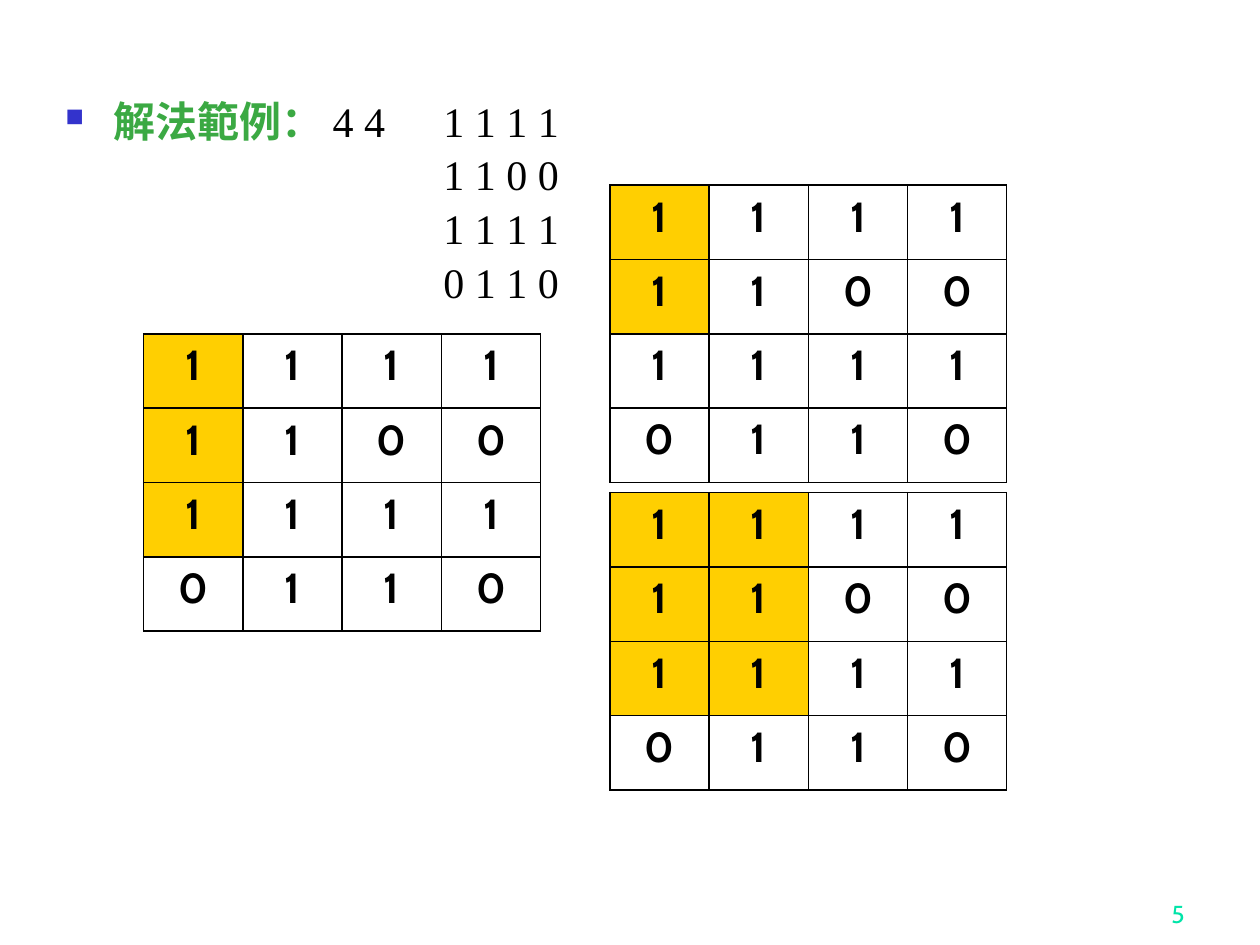
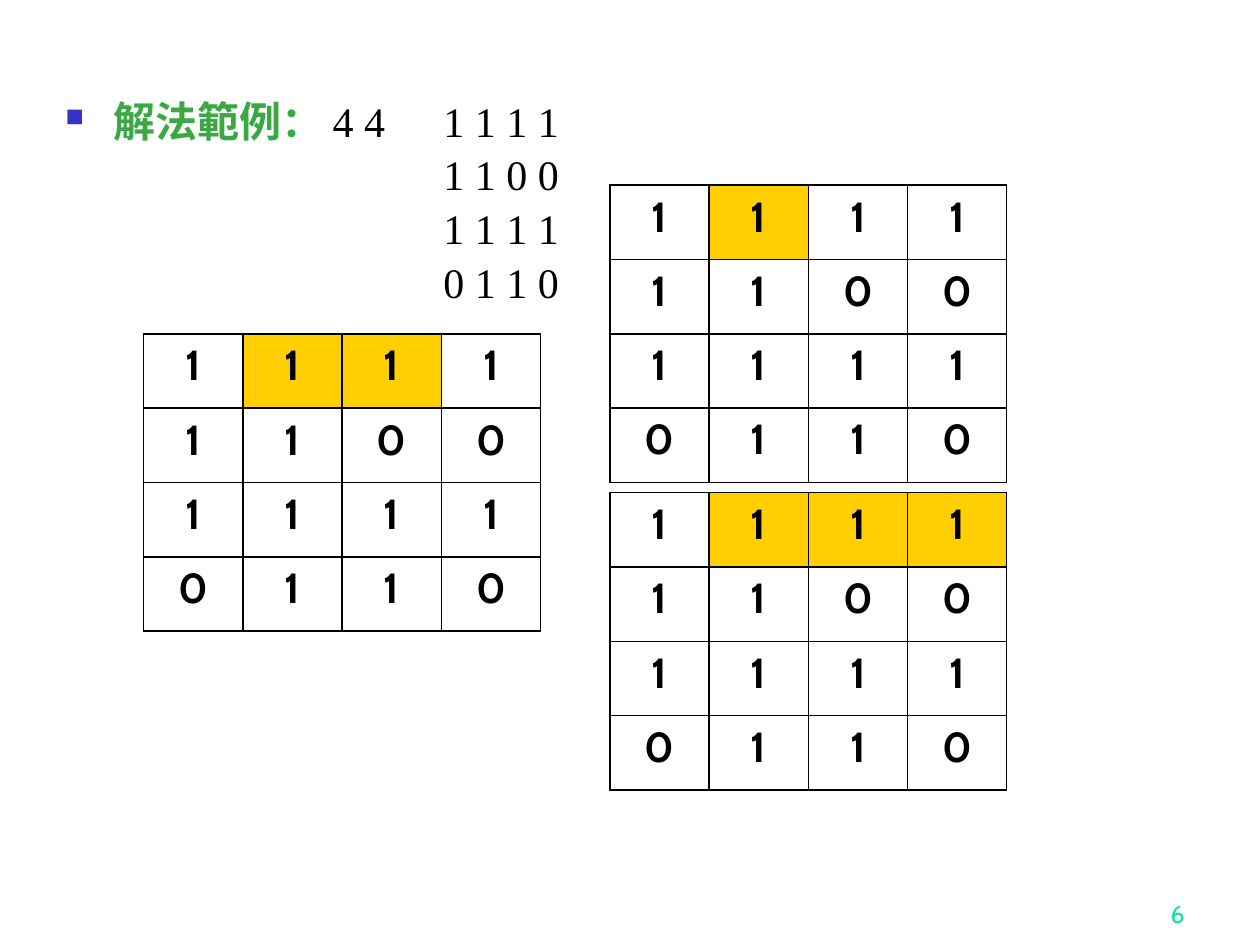
"""Builds two slides that step through sub-rectangles of a 4 by 4 binary matrix."""
from dataclasses import dataclass

from lxml.etree import SubElement
from pptx import Presentation
from pptx.dml.color import RGBColor
from pptx.enum.text import MSO_ANCHOR, PP_ALIGN
from pptx.oxml.ns import qn
from pptx.util import Inches, Pt

HEADING = "解法範例： "
MATRIX_SIZE = "4 4"
MATRIX = ["1111", "1100", "1111", "0110"]

BOARD_CORNERS = {"upper": (4.84, 1.47), "lower": (4.84, 3.91), "left": (1.14, 2.65)}
SLIDES = [
    {
        "number": 5,
        "marked": {
            "upper": {"rows": range(0, 2), "columns": range(0, 1)},
            "lower": {"rows": range(0, 3), "columns": range(0, 2)},
            "left": {"rows": range(0, 3), "columns": range(0, 1)},
        },
    },
    {
        "number": 6,
        "marked": {
            "upper": {"rows": range(0, 1), "columns": range(1, 2)},
            "lower": {"rows": range(0, 1), "columns": range(1, 4)},
            "left": {"rows": range(0, 1), "columns": range(1, 3)},
        },
    },
]

SLIDE_SIZE = (10, 7.5)
BOARD_SIZE = (3.15, 2.36)
BODY_AREA = (0.42, 0.75, 8.83, 6.15)
NUMBER_AREA = (7.42, 6.92, 2.08, 0.5)
BULLET_INDENT = 0.38
MATRIX_INDENT = 3


@dataclass(frozen=True)
class Theme:
    """Colours, fonts and type sizes shared by the slides."""
    ink: str = "000000"
    paper: str = "FFFFFF"
    heading: str = "3BA943"
    bullet: str = "3333CC"
    marked: str = "FFCF01"
    number: str = "00E4A8"
    serif: str = "Times New Roman"
    sans: str = "Cabin"
    text_size: int = 24
    number_size: int = 14
    border: int = 1


THEME = Theme()


def style(font, name, size, color, bold=False):
    """Sets every property of a font."""
    font.name, font.size, font.bold = name, Pt(size), bold
    font.color.rgb = RGBColor.from_string(color)


def add_box(page, area):
    """Adds a wrapping text box and returns its text frame."""
    frame = page.shapes.add_textbox(*map(Inches, area)).text_frame
    frame.word_wrap = True
    return frame


def set_spacing(para, indent, hanging=0):
    """Sets line spacing, space before and indents of a body paragraph."""
    para.line_spacing = 0.9
    properties = para._p.get_or_add_pPr()
    properties.set("marL", str(Inches(indent)))
    properties.set("indent", str(-Inches(hanging)))
    before = SubElement(properties, qn("a:spcBef"))
    SubElement(before, qn("a:spcPct"), val="20000")
    return properties


def add_bullet(properties):
    """Adds a small square bullet."""
    color = SubElement(properties, qn("a:buClr"))
    SubElement(color, qn("a:srgbClr"), val=THEME.bullet)
    SubElement(properties, qn("a:buSzPct"), val="60000")
    SubElement(properties, qn("a:buChar"), char="■")


def add_body(page):
    """Writes the heading and the input matrix, one row per line."""
    frame = add_box(page, BODY_AREA)
    for index, row in enumerate(MATRIX):
        digits = " ".join(row)
        if index == 0:
            para = frame.paragraphs[0]
            add_bullet(set_spacing(para, BULLET_INDENT, BULLET_INDENT))
            span = para.add_run()
            span.text = HEADING
            style(span.font, THEME.serif, THEME.text_size, THEME.heading, bold=True)
            digits = f"{MATRIX_SIZE}\t{digits}"
        else:
            para = frame.add_paragraph()
            set_spacing(para, MATRIX_INDENT)
        span = para.add_run()
        span.text = digits
        style(span.font, THEME.serif, THEME.text_size, THEME.ink)


def add_borders(cell):
    """Draws a solid line on all four sides of a cell."""
    properties = cell._tc.get_or_add_tcPr()
    for side in ("lnL", "lnR", "lnT", "lnB"):
        line = SubElement(properties, qn(f"a:{side}"), w=str(Pt(THEME.border)))
        fill = SubElement(line, qn("a:solidFill"))
        SubElement(fill, qn("a:srgbClr"), val=THEME.ink)


def add_board(page, corner, marked):
    """Adds the matrix as a table with one rectangle of cells marked."""
    area = map(Inches, corner + BOARD_SIZE)
    table = page.shapes.add_table(len(MATRIX), len(MATRIX[0]), *area).table
    for row, digits in enumerate(MATRIX):
        for column, digit in enumerate(digits):
            cell = table.cell(row, column)
            add_borders(cell)
            inside = row in marked["rows"] and column in marked["columns"]
            cell.fill.solid()
            cell.fill.fore_color.rgb = RGBColor.from_string(THEME.marked if inside else THEME.paper)
            cell.text = digit
            para = cell.text_frame.paragraphs[0]
            para.alignment = PP_ALIGN.CENTER
            style(para.font, THEME.sans, THEME.text_size, THEME.ink, bold=True)


def add_number(page, number):
    """Writes the slide number at the bottom right."""
    frame = add_box(page, NUMBER_AREA)
    frame.vertical_anchor = MSO_ANCHOR.BOTTOM
    para = frame.paragraphs[0]
    para.text = str(number)
    para.alignment = PP_ALIGN.RIGHT
    style(para.font, THEME.sans, THEME.number_size, THEME.number)


def main():
    """Builds and saves the deck."""
    deck = Presentation()
    deck.slide_width, deck.slide_height = map(Inches, SLIDE_SIZE)
    for content in SLIDES:
        page = deck.slides.add_slide(deck.slide_layouts[6])
        add_number(page, content["number"])
        add_body(page)
        for name, corner in BOARD_CORNERS.items():
            add_board(page, corner, content["marked"][name])
    deck.save("out.pptx")


if __name__ == "__main__":
    main()
